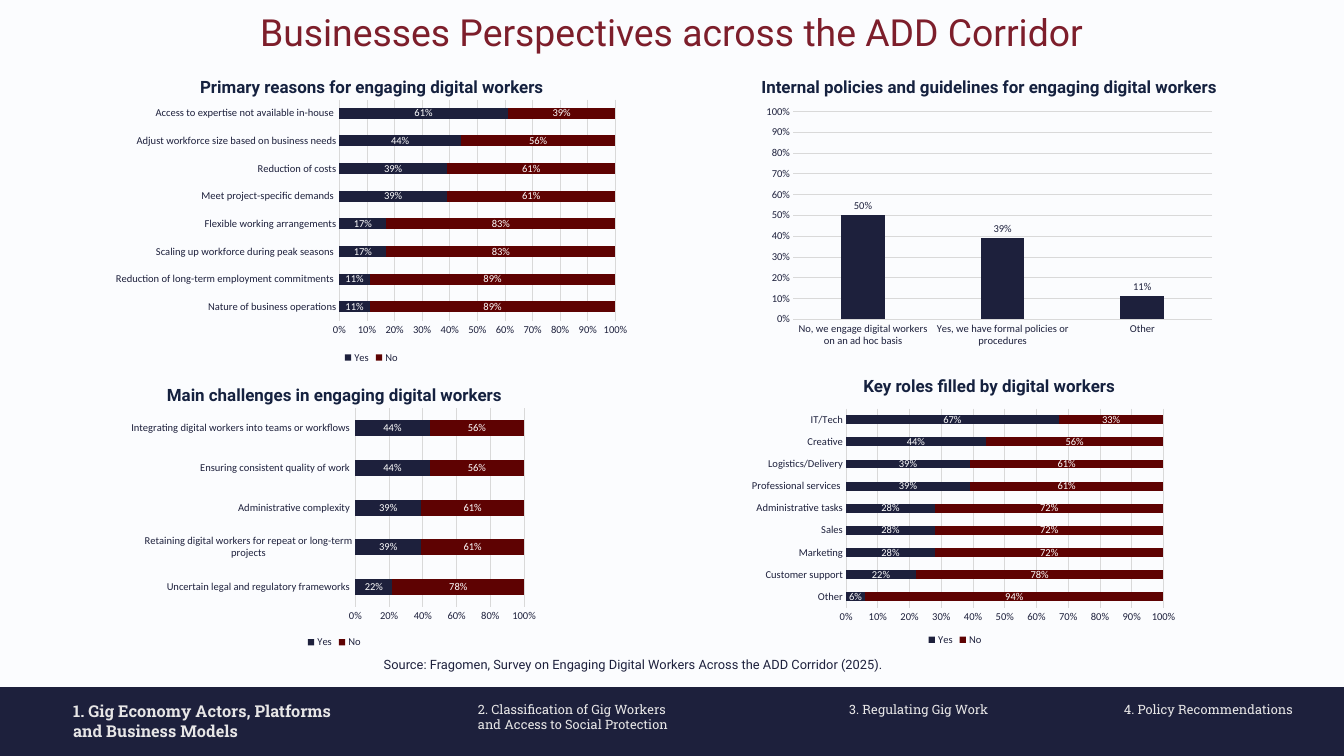
from lxml import etree
from pptx import Presentation
from pptx.chart.data import CategoryChartData
from pptx.dml.color import RGBColor
from pptx.enum.chart import XL_CHART_TYPE, XL_LABEL_POSITION, XL_LEGEND_POSITION, XL_TICK_MARK
from pptx.enum.shapes import MSO_SHAPE
from pptx.enum.text import PP_ALIGN
from pptx.oxml.ns import qn
from pptx.util import Inches, Pt

PAPER = RGBColor(0xFB, 0xFC, 0xFE)
MAROON = RGBColor(0x7D, 0x1E, 0x2B)
HEADING = RGBColor(0x15, 0x21, 0x3F)
NAVY = RGBColor(0x1D, 0x20, 0x3C)
DARK_RED = RGBColor(0x5E, 0x02, 0x02)
LIGHT_GREY = RGBColor(0xE7, 0xE6, 0xE6)
GRID = RGBColor(0xD9, 0xD9, 0xD9)
WHITE = RGBColor(0xFF, 0xFF, 0xFF)

HEADINGS = [
    ("Primary reasons for engaging digital workers", (2.25, 0.78, 4.35, 0.39)),
    ("Internal policies and guidelines for engaging digital workers", (8.55, 0.78, 6.45, 0.39)),
    ("Key roles filled by digital workers", (9.27, 4.34, 5.01, 0.39)),
    ("Main challenges in engaging digital workers", (1.37, 4.45, 5.22, 0.39)),
]
SECTIONS = [
    ("1. Gig Economy Actors, Platforms\nand Business Models", 0.87, 3.27),
    ("2. Classification of Gig Workers\nand Access to Social Protection", 5.69, 2.88),
    ("3. Regulating Gig Work", 10.11, 1.72),
    ("4. Policy Recommendations", 13.38, 2.07),
]
# Category and share answering yes, from the bottom bar up
REASONS = [
    ("Nature of business operations", 0.11),
    ("Reduction of long-term employment commitments ", 0.11),
    ("Scaling up workforce during peak seasons ", 0.17),
    ("Flexible working arrangements", 0.17),
    ("Meet project-specific demands ", 0.39),
    ("Reduction of costs", 0.39),
    ("Adjust workforce size based on business needs", 0.44),
    ("Access to expertise not available in-house ", 0.61),
]
POLICIES = [
    ("No, we engage digital workers on an ad hoc basis", 0.5),
    ("Yes, we have formal policies or procedures", 0.39),
    ("Other", 0.11),
]
CHALLENGES = [
    ("Uncertain legal and regulatory frameworks ", 0.22),
    ("Retaining digital workers for repeat or long-term projects", 0.39),
    ("Administrative complexity ", 0.39),
    ("Ensuring consistent quality of work ", 0.44),
    ("Integrating digital workers into teams or workflows ", 0.44),
]
ROLES = [
    ("Other", 0.06),
    ("Customer support", 0.22),
    ("Marketing", 0.28),
    ("Sales", 0.28),
    ("Administrative tasks", 0.28),
    ("Professional services ", 0.39),
    ("Logistics/Delivery", 0.39),
    ("Creative", 0.44),
    ("IT/Tech", 0.67),
]


def add_text(slide, text, box, size, color, font="Roboto", bold=False,
             align=PP_ALIGN.LEFT, spacing=None, inset=True):
    """Add a text box with one paragraph per line of text."""
    tf = slide.shapes.add_textbox(*map(Inches, box)).text_frame
    tf.word_wrap = True
    if not inset:
        tf.margin_left = tf.margin_top = tf.margin_right = tf.margin_bottom = 0
    for i, line in enumerate(text.split("\n")):
        p = tf.add_paragraph() if i else tf.paragraphs[0]
        p.alignment = align
        if spacing:
            p.line_spacing = Pt(spacing)
        r = p.add_run()
        r.text = line
        r.font.name, r.font.size, r.font.bold = font, Pt(size), bold
        r.font.color.rgb = color


def add_footer_band(slide):
    sp = slide.shapes.add_shape(MSO_SHAPE.RECTANGLE, 0, Inches(8.18), Inches(16), Inches(0.82))
    sp.shadow.inherit = False
    sp.fill.solid()
    sp.fill.fore_color.rgb = NAVY
    sp.line.fill.background()


def style_font(font, color=NAVY):
    font.name, font.size = "Calibri", Pt(9)
    font.color.rgb = color


def place_plot(chart, plot_box):
    """Fix the inner plot area as fractions (x, y, w, h) of the chart."""
    area = chart._chartSpace.find(".//" + qn("c:plotArea"))
    for old in area.findall(qn("c:layout")):
        area.remove(old)
    layout = etree.Element(qn("c:layout"))
    area.insert(0, layout)
    manual = etree.SubElement(layout, qn("c:manualLayout"))
    settings = [("layoutTarget", "inner"), ("xMode", "edge"), ("yMode", "edge")]
    for name, value in settings + list(zip("xywh", plot_box)):
        etree.SubElement(manual, qn("c:" + name)).set("val", str(value))


def style_axes(chart, unit):
    for axis in (chart.category_axis, chart.value_axis):
        axis.major_tick_mark = axis.minor_tick_mark = XL_TICK_MARK.NONE
        style_font(axis.tick_labels.font)
    chart.category_axis.has_major_gridlines = False
    value_axis = chart.value_axis
    value_axis.minimum_scale, value_axis.maximum_scale = 0, 1
    value_axis.major_unit = unit
    value_axis.has_major_gridlines = True
    value_axis.format.line.fill.background()
    value_axis.tick_labels.number_format = "0%"
    value_axis.tick_labels.number_format_is_linked = False
    for line in (chart.category_axis.format.line, value_axis.major_gridlines.format.line):
        line.color.rgb = GRID
        line.width = Pt(0.75)


def add_share_chart(slide, kind, rows, box, plot_box, unit=0.1):
    """Add a yes/no stacked bar chart, or a single-series column chart."""
    stacked = kind != XL_CHART_TYPE.COLUMN_CLUSTERED
    shares = [share for _, share in rows]
    data = CategoryChartData(number_format="0%")
    data.categories = [name for name, _ in rows]
    data.add_series("Yes" if stacked else "Series 1", shares)
    if stacked:
        data.add_series("No", [round(1 - share, 2) for share in shares])
    chart = slide.shapes.add_chart(kind, *map(Inches, box), data).chart
    chart.has_title = False
    style_font(chart.font)
    style_axes(chart, unit)
    place_plot(chart, plot_box)
    chart.has_legend = stacked
    if stacked:
        chart.legend.position = XL_LEGEND_POSITION.BOTTOM
        chart.legend.include_in_layout = False
        style_font(chart.legend.font)
    plot = chart.plots[0]
    plot.vary_by_categories = False
    plot.gap_width, plot.overlap = (150, 100) if stacked else (219, -27)
    for series, color in zip(plot.series, (NAVY, DARK_RED)):
        series.format.fill.solid()
        series.format.fill.fore_color.rgb = color
        series.invert_if_negative = False
        labels = series.data_labels
        labels.show_value = True
        labels.number_format, labels.number_format_is_linked = "0%", False
        labels.position = XL_LABEL_POSITION.CENTER if stacked else XL_LABEL_POSITION.OUTSIDE_END
        style_font(labels.font, WHITE if stacked else NAVY)


def main():
    prs = Presentation()
    prs.slide_width, prs.slide_height = Inches(16), Inches(9)
    slide = prs.slides.add_slide(prs.slide_layouts[6])
    slide.background.fill.solid()
    slide.background.fill.fore_color.rgb = PAPER

    add_text(slide, "Businesses Perspectives across the ADD Corridor", (1.74, 0.05, 12.52, 0.74),
             32, MAROON, align=PP_ALIGN.CENTER, spacing=39)
    for text, box in HEADINGS:
        add_text(slide, text, box, 14.5, HEADING, bold=True, align=PP_ALIGN.CENTER, spacing=23)
    add_text(slide, "Source: Fragomen, Survey on Engaging Digital Workers Across the ADD Corridor (2025).",
             (4.47, 7.77, 9.43, 0.29), 11, NAVY)

    add_footer_band(slide)
    for i, (text, left, width) in enumerate(SECTIONS):
        current = i == 0
        add_text(slide, text, (left, 8.35, width, 0.39), 14 if current else 11, LIGHT_GREY,
                 font="Roboto Slab", bold=current, inset=False)

    add_share_chart(slide, XL_CHART_TYPE.BAR_STACKED_100, REASONS,
                    (1.26, 1.12, 6.32, 3.25), (0.44, 0.02, 0.52, 0.81))
    add_share_chart(slide, XL_CHART_TYPE.COLUMN_CLUSTERED, POLICIES,
                    (9, 1.21, 5.54, 2.98), (0.08, 0.04, 0.9, 0.83))
    add_share_chart(slide, XL_CHART_TYPE.BAR_STACKED, CHALLENGES,
                    (1.47, 4.8, 5.02, 2.96), (0.55, 0.02, 0.4, 0.8), unit=0.2)
    add_share_chart(slide, XL_CHART_TYPE.BAR_STACKED, ROLES,
                    (8.55, 3.96, 5.64, 3.77), (0.27, 0.24, 0.67, 0.63))
    prs.save("out.pptx")


if __name__ == "__main__":
    main()
